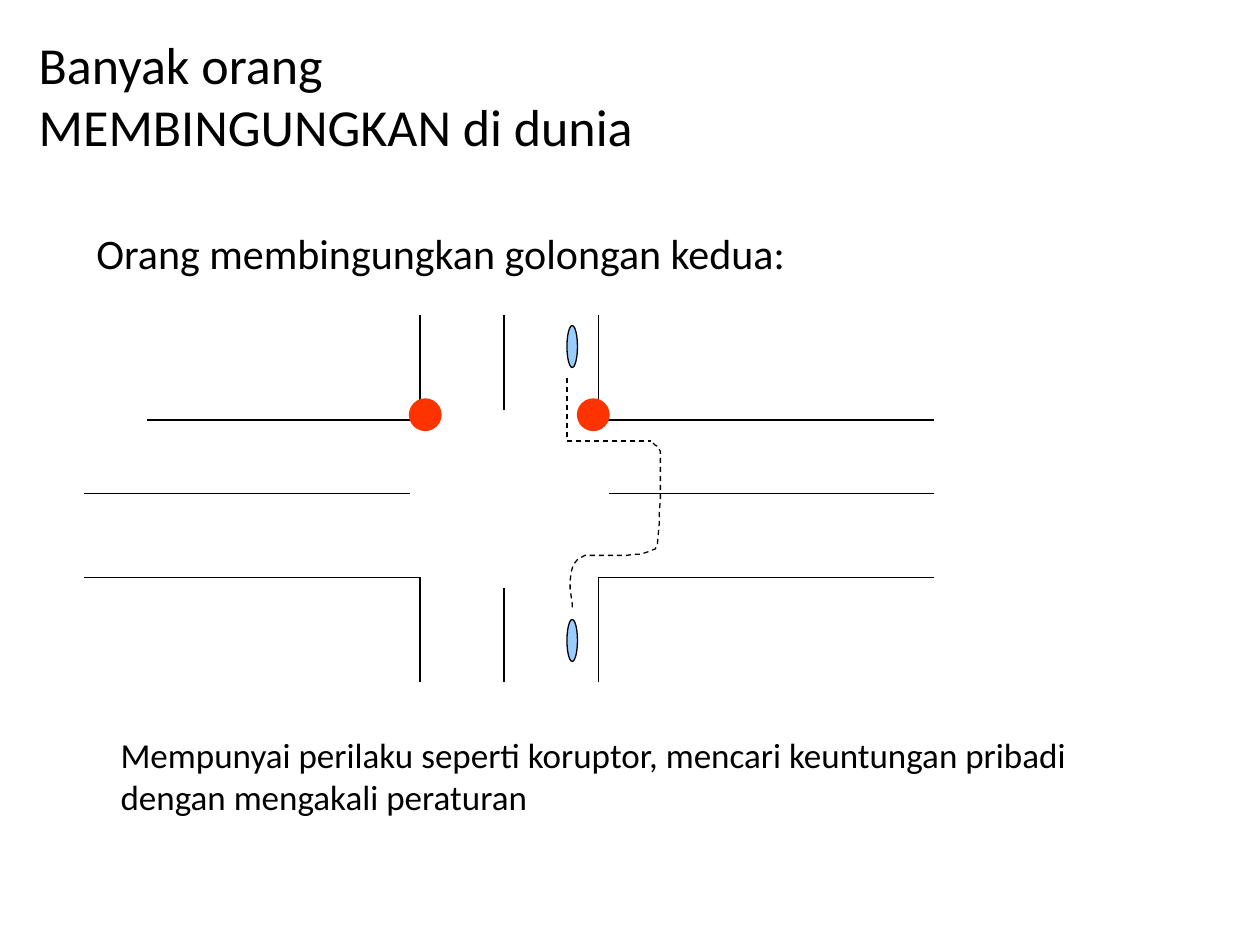
from lxml.etree import SubElement
from pptx import Presentation
from pptx.dml.color import RGBColor
from pptx.enum.dml import MSO_LINE
from pptx.enum.shapes import MSO_CONNECTOR, MSO_SHAPE
from pptx.enum.text import MSO_ANCHOR, PP_ALIGN
from pptx.oxml.ns import qn
from pptx.util import Pt

PX = 7620
BLACK = "000000"
CAR_BLUE = "99CCFF"
SIGNAL_RED = "FF3300"
CURVE_STEPS = 8

ROAD_EDGES = [
    (140, 400, 400, 400), (400, 400, 400, 300),
    (480, 300, 480, 390),
    (570, 300, 570, 400), (570, 400, 890, 400),
    (580, 470, 890, 470), (80, 470, 390, 470),
    (570, 550, 890, 550), (80, 550, 400, 550),
    (400, 650, 400, 550), (570, 650, 570, 550),
    (480, 560, 480, 650),
]
DETOUR_START = (622, 422)
DETOUR_CURVES = [
    ((625, 426), (629, 426), (629, 432)),
    ((629, 462), (629, 491), (626, 520)),
    ((626, 523), (612, 528), (610, 528)),
    ((592, 529), (574, 529), (557, 529)),
    ((536, 536), (545, 568), (545, 581)),
]


def px(*lengths):
    return [length * PX for length in lengths]


def color(hex_code):
    return RGBColor.from_string(hex_code)


def style_line(line, hex_code, dashed=False):
    line.color.rgb = color(hex_code)
    line.width = Pt(0.75)
    if dashed:
        line.dash_style = MSO_LINE.DASH


def add_text(slide, box, wording, size, anchor=MSO_ANCHOR.TOP):
    frame = slide.shapes.add_textbox(*px(*box)).text_frame
    frame.word_wrap = True
    frame.vertical_anchor = anchor
    frame.text = wording
    paragraph = frame.paragraphs[0]
    paragraph.alignment = PP_ALIGN.LEFT
    for run in paragraph.runs:
        run.font.name = "Calibri"
        run.font.size = Pt(size)
        run.font.color.rgb = color(BLACK)


def add_line(slide, ends, dashed=False):
    connector = slide.shapes.add_connector(MSO_CONNECTOR.STRAIGHT, *px(*ends))
    style_line(connector.line, BLACK, dashed)
    SubElement(connector._element.spPr, qn("a:effectLst"))


def add_oval(slide, box, fill, outline):
    oval = slide.shapes.add_shape(MSO_SHAPE.OVAL, *px(*box))
    oval.shadow.inherit = False
    oval.fill.solid()
    oval.fill.fore_color.rgb = color(fill)
    style_line(oval.line, outline)


def curve_point(start, first, second, end, t):
    s = 1 - t
    return tuple(
        s**3 * a + 3 * s * s * t * b + 3 * s * t * t * c + t**3 * d
        for a, b, c, d in zip(start, first, second, end)
    )


def add_detour(slide, start, curves):
    points = []
    origin = start
    for first, second, end in curves:
        points += [
            curve_point(origin, first, second, end, step / CURVE_STEPS)
            for step in range(1, CURVE_STEPS + 1)
        ]
        origin = end
    builder = slide.shapes.build_freeform(*start, scale=PX)
    builder.add_line_segments(points, close=False)
    detour = builder.convert_to_shape()
    detour.shadow.inherit = False
    detour.fill.background()
    style_line(detour.line, BLACK, dashed=True)


def main():
    presentation = Presentation()
    presentation.slide_width, presentation.slide_height = px(1200, 900)
    slide = presentation.slides.add_slide(presentation.slide_layouts[6])

    add_text(slide, (25, 30, 1052, 120),
             "Banyak orang\vMEMBINGUNGKAN di dunia", 29.7, MSO_ANCHOR.MIDDLE)
    add_text(slide, (80, 211, 1040, 60),
             "Orang membingungkan golongan kedua:", 24)
    add_text(slide, (103, 693, 1017, 96),
             "Mempunyai perilaku seperti koruptor, mencari keuntungan pribadi "
             "dengan mengakali peraturan", 20)

    for edge in ROAD_EDGES:
        add_line(slide, edge)
    for signal_left in (390, 550):
        add_oval(slide, (signal_left, 380, 30, 30), SIGNAL_RED, SIGNAL_RED)
    for car_top in (310, 590):
        add_oval(slide, (540, car_top, 10, 40), CAR_BLUE, BLACK)
    for approach in ((540, 360, 540, 420), (540, 420, 620, 420)):
        add_line(slide, approach, dashed=True)
    add_detour(slide, DETOUR_START, DETOUR_CURVES)

    presentation.save("out.pptx")


if __name__ == "__main__":
    main()
